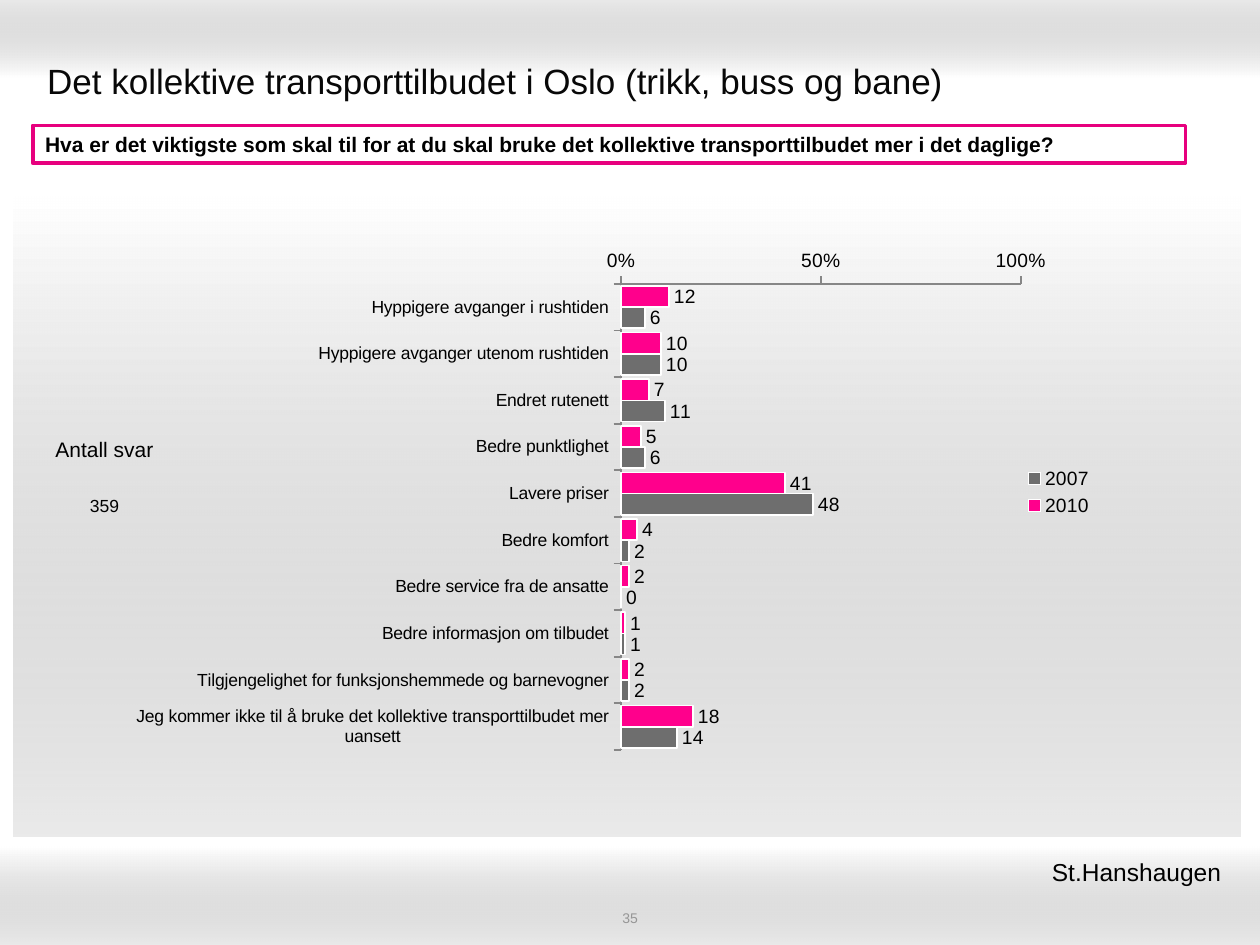
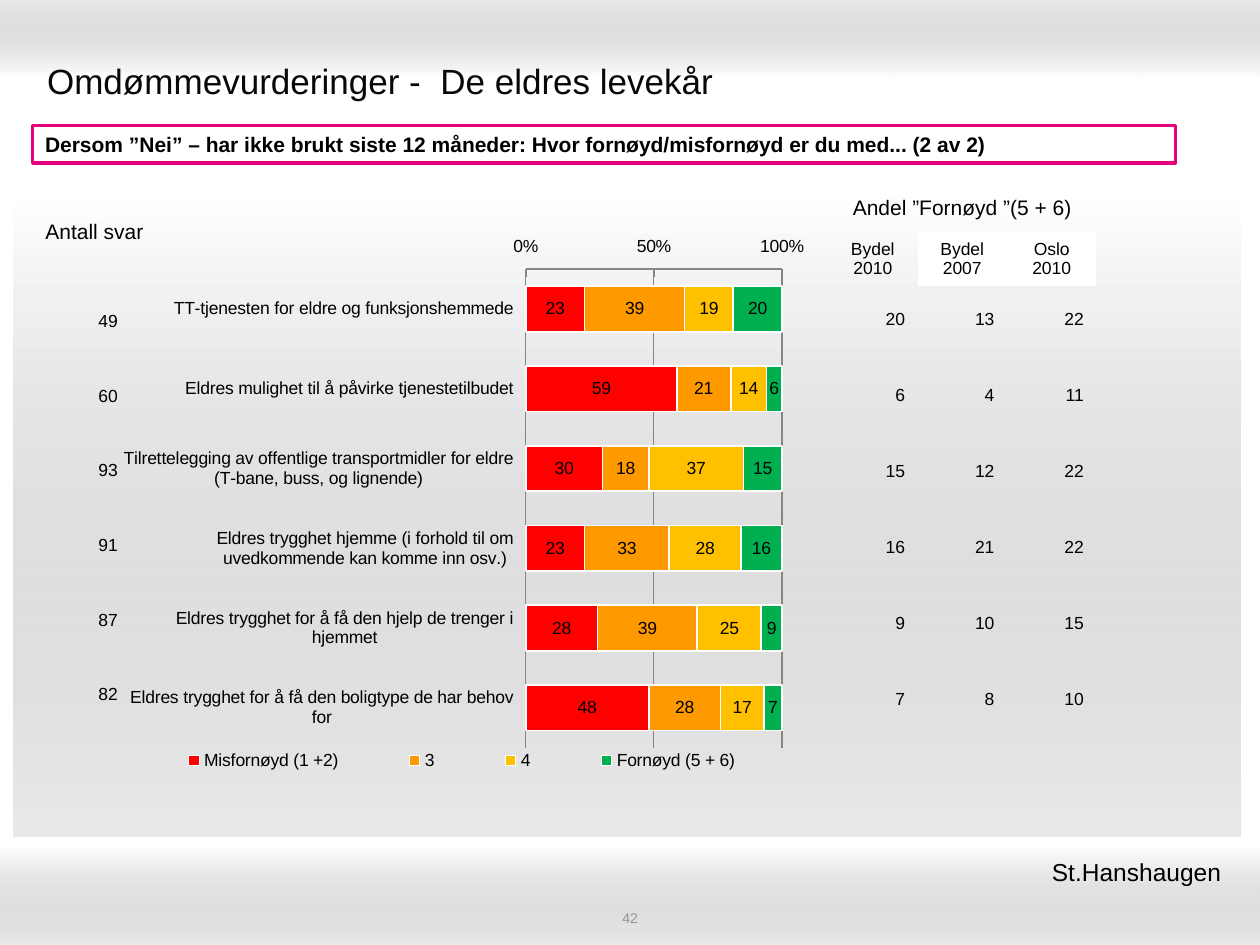
from collections import namedtuple
from dataclasses import dataclass

from pptx import Presentation
from pptx.chart.data import CategoryChartData
from pptx.dml.color import RGBColor
from pptx.enum.chart import XL_CHART_TYPE as ChartType
from pptx.enum.chart import XL_LABEL_POSITION as LabelPos
from pptx.enum.chart import XL_LEGEND_POSITION as LegendPos
from pptx.enum.chart import XL_TICK_LABEL_POSITION as TickLabels
from pptx.enum.chart import XL_TICK_MARK as Tick
from pptx.enum.shapes import MSO_SHAPE as Shape
from pptx.enum.text import MSO_ANCHOR as Anchor
from pptx.enum.text import PP_ALIGN as Align
from pptx.oxml import parse_xml
from pptx.oxml.ns import nsdecls, qn
from pptx.util import Pt

Box = namedtuple("Box", "left top width height")


@dataclass(frozen=True)
class Theme:
    font: str = "Arial"
    white: str = "FFFFFF"
    black: str = "000000"
    title: str = "080808"
    muted: str = "969696"
    axis: str = "868686"
    band: str = "999999"
    accent: str = "E7007E"
    pink: str = "FF008C"
    grey: str = "6E6E6E"
    red: str = "FF0000"
    orange: str = "FF9900"
    yellow: str = "FFC000"
    green: str = "00B050"
    title_size: float = 20
    footer_size: float = 14
    heading_size: float = 12
    chart_size: float = 11
    body_size: float = 10
    number_size: float = 8


THEME = Theme()
DISTRICT = "St.Hanshaugen"
COUNT_HEADING = "Antall svar"
NO_GRID_STYLE = "{2D5ABB26-0587-4C30-8999-92F81FD0307C}"

# Regions shared by the slides
TOP_BAND = Box(0, 0, 720, 44.6)
BOTTOM_BAND = Box(0, 484, 720, 56)
PANEL = Box(8, 112.3, 700.8, 365.8)
TITLE = Box(19.8, 26, 680.4, 39.6)
PAGE_NUMBER = Box(246, 519.5, 228.2, 10)
FOOTER = Box(439.6, 486, 269.3, 24.5)


def place(box):
    return [Pt(length) for length in box]


def rgb(colour):
    return RGBColor.from_string(colour)


def style_font(font, size, colour=THEME.black, bold=False):
    font.name, font.size, font.bold = THEME.font, Pt(size), bold
    font.color.rgb = rgb(colour)


def write(frame, wording, size, align=Align.LEFT, **look):
    frame.text = wording
    for paragraph in frame.paragraphs:
        paragraph.alignment = align
        for run in paragraph.runs:
            style_font(run.font, size, **look)


def label(slide, box, wording, size, align=Align.LEFT, **look):
    frame = slide.shapes.add_textbox(*place(box)).text_frame
    frame.word_wrap = True
    frame.vertical_anchor = Anchor.MIDDLE
    write(frame, wording, size, align, **look)
    return frame


def band(slide, box, angle):
    """Fade from solid white to translucent grey."""
    strip = slide.shapes.add_shape(Shape.RECTANGLE, *place(box))
    strip.shadow.inherit = False
    strip.line.fill.background()
    strip.fill.background()
    fade = parse_xml(
        f'<a:gradFill {nsdecls("a")} rotWithShape="1"><a:gsLst>'
        f'<a:gs pos="0"><a:srgbClr val="{THEME.white}"/></a:gs>'
        f'<a:gs pos="100000"><a:srgbClr val="{THEME.band}"><a:alpha val="20000"/></a:srgbClr></a:gs>'
        f'</a:gsLst><a:lin ang="{angle * 60000}" scaled="1"/></a:gradFill>')
    properties = strip.element.spPr
    properties.replace(properties.find(qn("a:noFill")), fade)


def base_slide(deck, title, number):
    slide = deck.slides.add_slide(deck.slide_layouts[6])
    # Background bands
    for box, angle in ((TOP_BAND, 270), (BOTTOM_BAND, 90), (PANEL, 90)):
        band(slide, box, angle)
    # Title, page number and district
    label(slide, TITLE, title, THEME.title_size, colour=THEME.title)
    label(slide, PAGE_NUMBER, number, THEME.number_size, Align.CENTER, colour=THEME.muted)
    district = label(slide, FOOTER, DISTRICT, THEME.footer_size, Align.RIGHT)
    district.margin_right = Pt(11)
    return slide


def question_bar(slide, box, question):
    bar = slide.shapes.add_shape(Shape.RECTANGLE, *place(box))
    bar.shadow.inherit = False
    bar.fill.solid()
    bar.fill.fore_color.rgb = rgb(THEME.white)
    bar.line.color.rgb = rgb(THEME.accent)
    bar.line.width = Pt(2)
    bar.text_frame.word_wrap = True
    bar.text_frame.vertical_anchor = Anchor.MIDDLE
    write(bar.text_frame, question, THEME.heading_size, bold=True)


def plain_table(slide, box, rows, align, size=THEME.body_size):
    """Equal rows and columns without fill or grid."""
    table = slide.shapes.add_table(len(rows), len(rows[0]), *place(box)).table
    table.first_row = table.horz_banding = False
    table._tbl.tblPr.find(qn("a:tableStyleId")).text = NO_GRID_STYLE
    for column in table.columns:
        column.width = Pt(box.width / len(rows[0]))
    for row, entries in zip(table.rows, rows):
        row.height = Pt(box.height / len(rows))
        for cell, entry in zip(row.cells, entries):
            cell.fill.background()
            cell.vertical_anchor = Anchor.MIDDLE
            write(cell.text_frame, entry, size, align)
    return table


def answer_counts(slide, heading_box, counts_box, counts):
    plain_table(slide, counts_box, [[str(count)] for count in counts], Align.RIGHT)
    plain_table(slide, heading_box, [[COUNT_HEADING]], Align.CENTER, THEME.heading_size)


def satisfied_share(slide, box, shares):
    """Heading rows on top of the figures, in one column grid."""
    heading_height, years_height = 26.6, 30.6
    head_box = box._replace(height=heading_height + years_height)
    figures_box = box._replace(top=box.top + 55.3, height=box.height - 55.5)
    plain_table(slide, figures_box, [[str(share) for share in row] for row in shares], Align.RIGHT)

    head = plain_table(
        slide, head_box,
        [["Andel ”Fornøyd ”(5 + 6)", "", ""], ["Bydel\n2010", "Bydel\n2007", "Oslo\n2010"]],
        Align.CENTER)
    head.rows[0].height, head.rows[1].height = Pt(heading_height), Pt(years_height)
    heading = head.cell(0, 0)
    heading.merge(head.cell(0, 2))
    heading.text_frame.paragraphs[0].runs[0].font.size = Pt(THEME.heading_size)
    for column in (1, 2):
        fill = head.cell(1, column).fill
        fill.solid()
        fill.fore_color.rgb = rgb(THEME.white)


def fix_layout(parent, index, area, inner=False):
    """Pin a chart part to fractions of the chart: x, y, width, height."""
    for existing in parent.findall(qn("c:layout")):
        parent.remove(existing)
    target = '<c:layoutTarget val="inner"/>' if inner else ""
    modes = '<c:xMode val="edge"/><c:yMode val="edge"/>'
    sizes = "".join(f'<c:{side} val="{part}"/>' for side, part in zip("xywh", area))
    parent.insert(index, parse_xml(
        f'<c:layout {nsdecls("c")}><c:manualLayout>{target}{modes}{sizes}'
        "</c:manualLayout></c:layout>"))


def bar_chart(slide, box, kind, categories, series, size, plot_area, inner, gap, overlap,
              label_position, legend_position):
    data = CategoryChartData(number_format="0")
    data.categories = categories
    for name, values, _ in series:
        data.add_series(name, values)
    chart = slide.shapes.add_chart(kind, *place(box), data).chart
    chart.has_title = False
    style_font(chart.font, size)

    # Bars and their values
    plot = chart.plots[0]
    plot.vary_by_categories = False
    plot.gap_width, plot.overlap = gap, overlap
    for bars, (_, _, colour) in zip(plot.series, series):
        bars.format.fill.solid()
        bars.format.fill.fore_color.rgb = rgb(colour)
        bars.format.line.color.rgb = rgb(THEME.white)
        bars.format.line.width = Pt(1)
        values = bars.data_labels
        values.show_value = True
        values.number_format, values.number_format_is_linked = "0", False
        values.position = label_position
        style_font(values.font, size)

    # Axes
    answers, percent = chart.category_axis, chart.value_axis
    answers.reverse_order = True
    percent.minimum_scale, percent.maximum_scale, percent.major_unit = 0, 100, 50
    percent.has_major_gridlines = False
    percent.tick_labels.number_format = r"General\%"
    percent.tick_labels.number_format_is_linked = False
    for axis, axis_size in ((answers, THEME.body_size), (percent, size)):
        axis.major_tick_mark, axis.minor_tick_mark = Tick.OUTSIDE, Tick.NONE
        axis.format.line.color.rgb = rgb(THEME.axis)
        axis.format.line.width = Pt(1)
        style_font(axis.tick_labels.font, axis_size)

    # Legend and plot area
    chart.has_legend = True
    chart.legend.position = legend_position
    chart.legend.include_in_layout = legend_position == LegendPos.RIGHT
    style_font(chart.legend.font, size)
    fix_layout(chart.element.find(".//" + qn("c:plotArea")), 0, plot_area, inner)
    return chart


def transport_slide(deck):
    slide = base_slide(deck, "Det kollektive transporttilbudet i Oslo (trikk, buss og bane)", "35")
    measures = [
        "Hyppigere avganger i rushtiden", "Hyppigere avganger utenom rushtiden",
        "Endret rutenett", "Bedre punktlighet", "Lavere priser", "Bedre komfort",
        "Bedre service fra de ansatte", "Bedre informasjon om tilbudet",
        "Tilgjengelighet for funksjonshemmede og barnevogner",
        "Jeg kommer ikke til å bruke det kollektive transporttilbudet mer uansett"]
    years = [("2010", (12, 10, 7, 5, 41, 4, 2, 1, 2, 18), THEME.pink),
             ("2007", (6, 10, 11, 6, 48, 2, 0, 1, 2, 14), THEME.grey)]
    bar_chart(slide, Box(53.7, 111.3, 578.2, 339.8), ChartType.BAR_CLUSTERED, measures, years,
              THEME.chart_size, (0.521, 0.15, 0.395, 0.784), True, 20, 0,
              LabelPos.OUTSIDE_END, LegendPos.RIGHT)
    question_bar(slide, Box(18.7, 71.7, 658.8, 21.6),
                 "Hva er det viktigste som skal til for at du skal bruke det kollektive "
                 "transporttilbudet mer i det daglige?")
    answer_counts(slide, Box(8.6, 236.2, 102.2, 42.5), Box(37.8, 269.3, 37.4, 40.3), [359])


def elderly_slide(deck):
    slide = base_slide(deck, "Omdømmevurderinger -  De eldres levekår", "42")
    question_bar(slide, Box(18.7, 71.7, 653, 21.6),
                 "Dersom ”Nei” – har ikke brukt siste 12 måneder: Hvor fornøyd/misfornøyd "
                 "er du med... (2 av 2)")
    services = [
        "TT-tjenesten for eldre og funksjonshemmede",
        "Eldres mulighet til å påvirke tjenestetilbudet",
        "Tilrettelegging av offentlige transportmidler for eldre (T-bane, buss, og lignende)",
        "Eldres trygghet hjemme (i forhold til om uvedkommende kan komme inn osv.)",
        "Eldres trygghet for å få den hjelp de trenger i hjemmet",
        "Eldres trygghet for å få den boligtype de har behov for"]
    ratings = [("Misfornøyd (1 +2)", (23, 59, 30, 23, 28, 48), THEME.red),
               ("3", (39, 21, 18, 33, 39, 28), THEME.orange),
               ("4", (19, 14, 37, 28, 25, 17), THEME.yellow),
               ("Fornøyd (5 + 6)", (20, 6, 15, 16, 9, 7), THEME.green)]
    chart = bar_chart(slide, Box(70.6, 128.9, 396.7, 326.9), ChartType.BAR_STACKED, services,
                      ratings, THEME.body_size, (0, 0.02, 0.98, 0.893), False, 75, 100,
                      LabelPos.CENTER, LegendPos.BOTTOM)
    # Grid lines, hidden answer axis and a wide legend
    answers, percent = chart.category_axis, chart.value_axis
    answers.major_tick_mark, percent.major_tick_mark = Tick.NONE, Tick.INSIDE
    answers.tick_label_position = percent.tick_label_position = TickLabels.LOW
    answers.format.line.fill.background()
    percent.has_major_gridlines = True
    percent.major_gridlines.format.line.color.rgb = rgb(THEME.axis)
    fix_layout(chart.element.find(".//" + qn("c:legend")), 1, (0, 0.903, 0.975, 0.065))

    satisfied_share(slide, Box(473.2, 105.8, 153.4, 316.1),
                    [(20, 13, 22), (6, 4, 11), (15, 12, 22), (16, 21, 22), (9, 10, 15), (7, 8, 10)])
    answer_counts(slide, Box(2.9, 111.3, 102.2, 42.5), Box(37.1, 162.3, 37.4, 256.3),
                  [49, 60, 93, 91, 87, 82])


def main():
    deck = Presentation()
    deck.slide_width, deck.slide_height = Pt(720), Pt(540)
    transport_slide(deck)
    elderly_slide(deck)
    deck.save("out.pptx")


if __name__ == "__main__":
    main()
